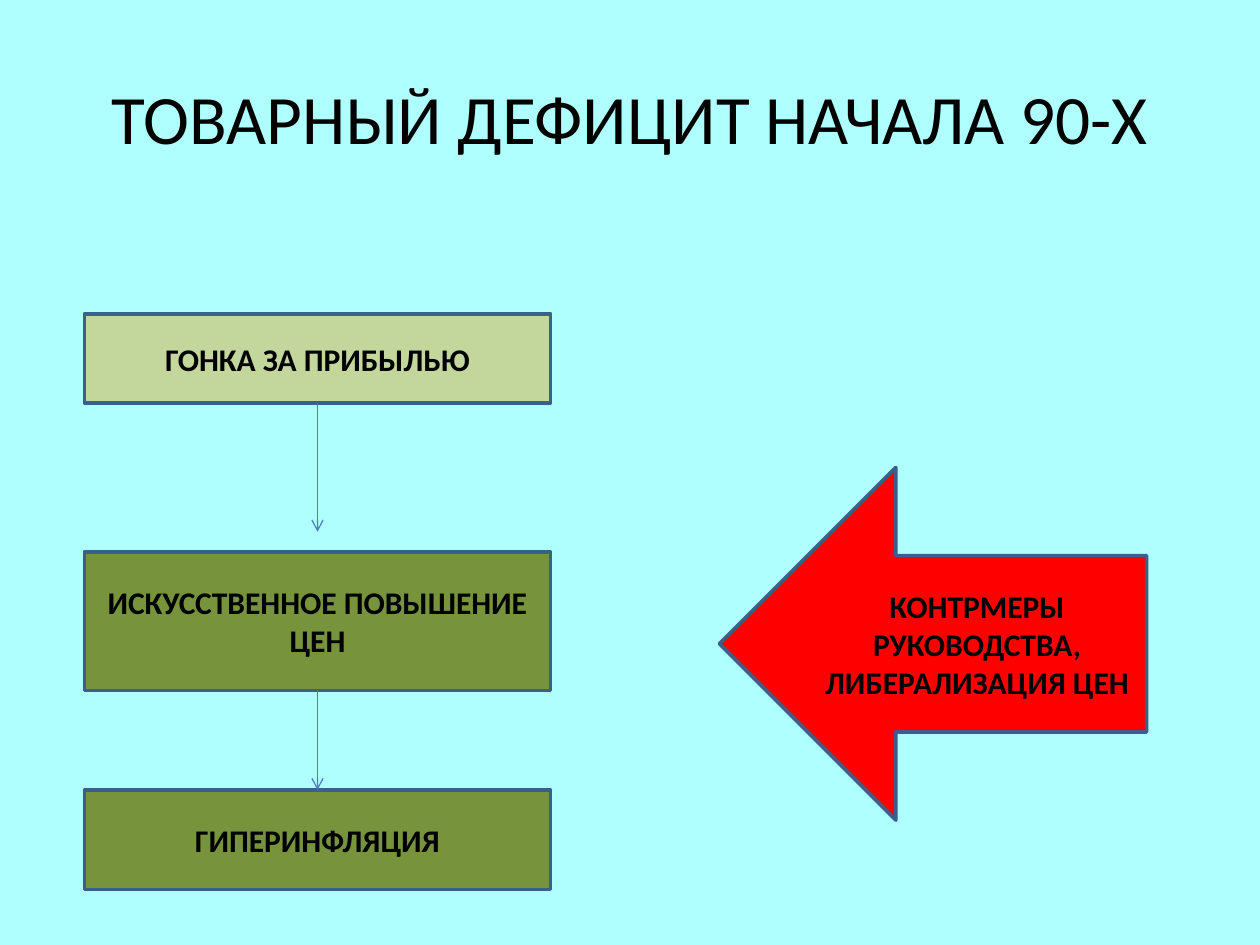
from lxml import etree
from pptx import Presentation
from pptx.dml.color import RGBColor
from pptx.enum.shapes import MSO_CONNECTOR, MSO_SHAPE
from pptx.enum.text import MSO_ANCHOR, PP_ALIGN
from pptx.oxml.ns import qn
from pptx.util import Inches, Pt

RECTANGLE, LEFT_ARROW = MSO_SHAPE.RECTANGLE, MSO_SHAPE.LEFT_ARROW
STRAIGHT = MSO_CONNECTOR.STRAIGHT
MIDDLE, CENTER = MSO_ANCHOR.MIDDLE, PP_ALIGN.CENTER
BOTTOM_SIDE, TOP_SIDE = 2, 0

BACKGROUND = RGBColor(0xAF, 0xFF, 0xFF)
BLACK = RGBColor(0x00, 0x00, 0x00)
LIGHT_GREEN = RGBColor(0xC3, 0xD6, 0x9B)
GREEN = RGBColor(0x77, 0x93, 0x3C)
RED = RGBColor(0xFF, 0x00, 0x00)
OUTLINE = RGBColor(0x3A, 0x5F, 0x8C)
ARROW_BLUE = RGBColor(0x4B, 0x7E, 0xBC)


def write_text(shape, lines, size, bold):
    frame = shape.text_frame
    frame.word_wrap = True
    frame.vertical_anchor = MIDDLE
    for index, line in enumerate(lines):
        para = frame.add_paragraph() if index else frame.paragraphs[0]
        para.alignment = CENTER
        span = para.add_run()
        span.text = line
        span.font.name = "Calibri"
        span.font.size = Pt(size)
        span.font.bold = bold
        span.font.color.rgb = BLACK


deck = Presentation()
deck.slide_width, deck.slide_height = Inches(10), Inches(7.5)
page = deck.slides.add_slide(deck.slide_layouts[6])
page.background.fill.solid()
page.background.fill.fore_color.rgb = BACKGROUND

title = page.shapes.add_textbox(Inches(0.5), Inches(0.3), Inches(9), Inches(1.25))
write_text(title, ["ТОВАРНЫЙ ДЕФИЦИТ НАЧАЛА 90-Х"], 39.6, False)

# Three steps of the chain, then the countermeasures arrow
blocks = [
    (RECTANGLE, 0.67, 2.49, 3.7, 0.71, LIGHT_GREEN, ["ГОНКА ЗА ПРИБЫЛЬЮ"]),
    (RECTANGLE, 0.67, 4.38, 3.7, 1.1, GREEN, ["ИСКУССТВЕННОЕ ПОВЫШЕНИЕ ЦЕН"]),
    (RECTANGLE, 0.67, 6.27, 3.7, 0.79, GREEN, ["ГИПЕРИНФЛЯЦИЯ"]),
    (LEFT_ARROW, 5.71, 3.71, 3.39, 2.8, RED,
     ["КОНТРМЕРЫ РУКОВОДСТВА,", "ЛИБЕРАЛИЗАЦИЯ ЦЕН"]),
]
boxes = []
for kind, left, top, width, height, colour, lines in blocks:
    box = page.shapes.add_shape(
        kind, Inches(left), Inches(top), Inches(width), Inches(height))
    box.shadow.inherit = False
    box.fill.solid()
    box.fill.fore_color.rgb = colour
    box.line.color.rgb = OUTLINE
    box.line.width = Pt(2)
    write_text(box, lines, 18, True)
    boxes.append(box)

# The first link stops short of the second box, so only its start is joined
cause, price_rise, hyperinflation, countermeasures = boxes
for source, target, end_y in ((cause, None, 4.22), (price_rise, hyperinflation, 6.27)):
    link = page.shapes.add_connector(
        STRAIGHT, Inches(2.52), source.top + source.height, Inches(2.52), Inches(end_y))
    link.begin_connect(source, BOTTOM_SIDE)
    if target is not None:
        link.end_connect(target, TOP_SIDE)
    else:
        link.end_x = link.begin_x
    link.line.color.rgb = ARROW_BLUE
    link.line.width = Pt(0.75)
    etree.SubElement(link.line._get_or_add_ln(), qn("a:tailEnd"), type="arrow")
    etree.SubElement(link._element.spPr, qn("a:effectLst"))

deck.save("out.pptx")
